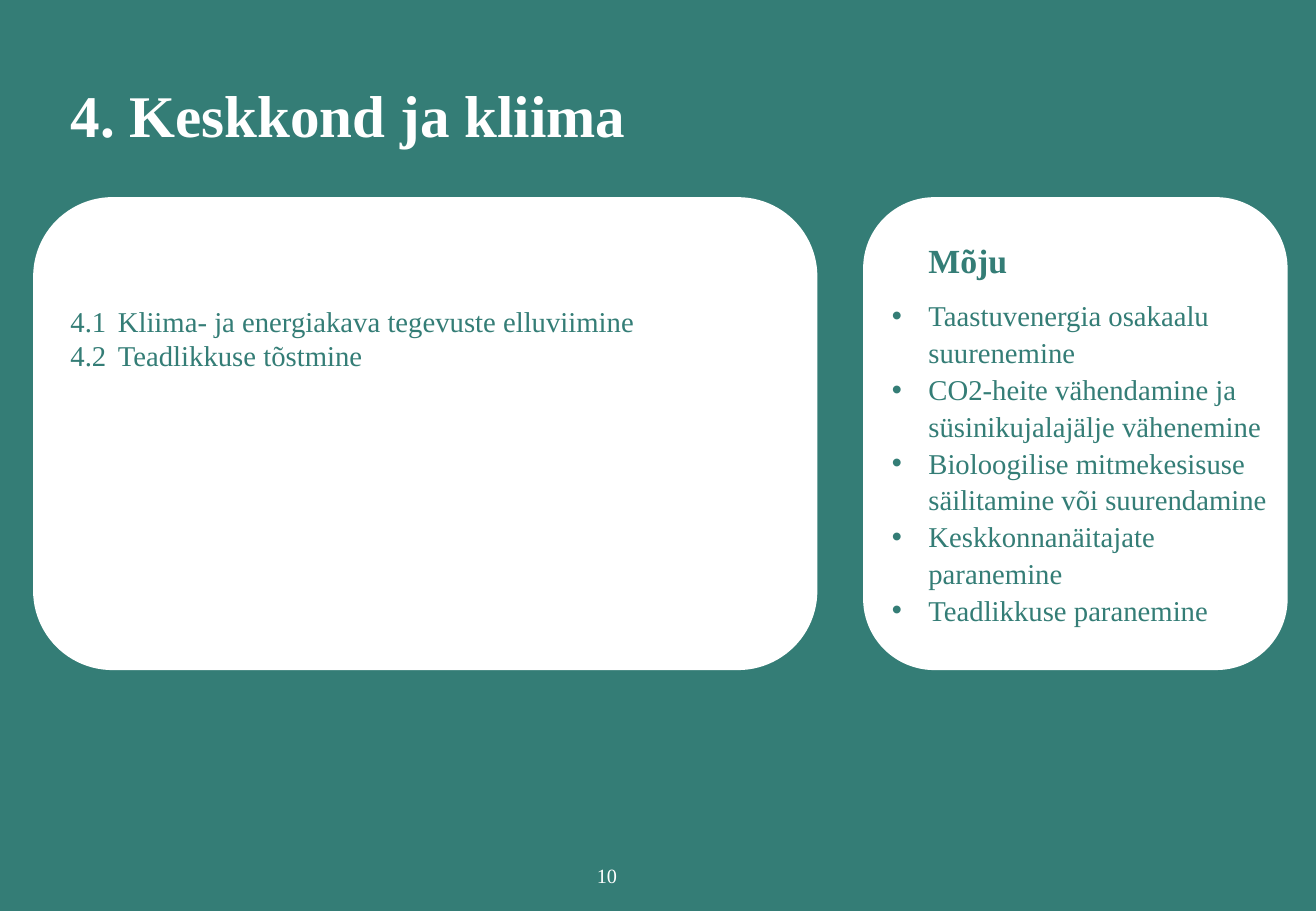
from lxml import etree
from pptx import Presentation
from pptx.dml.color import RGBColor
from pptx.enum.shapes import MSO_SHAPE as Shape
from pptx.enum.text import MSO_ANCHOR as Anchor, PP_ALIGN as Align
from pptx.oxml.ns import qn
from pptx.util import Inches, Pt

COLORS = {"teal": "347D76", "white": "FFFFFF"}
FONT = "Times New Roman"
INSET = 0.05
TEXT_INDENT = 0.39
BULLET_HANG = 0.3

ACTIVITIES = [
    ("4.1", "Kliima- ja energiakava tegevuste elluviimine"),
    ("4.2", "Teadlikkuse tõstmine"),
]
IMPACTS = [
    "Taastuvenergia osakaalu suurenemine",
    "CO2-heite vähendamine ja süsinikujalajälje vähenemine",
    "Bioloogilise mitmekesisuse säilitamine või suurendamine",
    "Keskkonnanäitajate paranemine",
    "Teadlikkuse paranemine",
]


def color(name):
    return RGBColor.from_string(COLORS[name])


def add_text_frame(slide, left, top, width, height, wrap=True):
    frame = slide.shapes.add_textbox(
        Inches(left), Inches(top), Inches(width), Inches(height)).text_frame
    frame.word_wrap = wrap
    frame.vertical_anchor = Anchor.MIDDLE
    frame.margin_left = frame.margin_right = Inches(INSET)
    frame.margin_top = frame.margin_bottom = Inches(INSET)
    return frame


def add_paragraph(frame, text, size, ink, bold=False, align=Align.LEFT):
    """Fill the empty first paragraph, or append a new one."""
    first = frame.paragraphs[0]
    paragraph = frame.add_paragraph() if first.runs else first
    paragraph.alignment = align
    run = paragraph.add_run()
    run.text = text
    run.font.name = FONT
    run.font.size = Pt(size)
    run.font.bold = bold
    run.font.color.rgb = color(ink)
    return paragraph


def set_indent(paragraph, margin, hang=0):
    properties = paragraph._p.get_or_add_pPr()
    properties.set("marL", str(Inches(margin)))
    properties.set("indent", str(Inches(-hang)))
    return properties


def add_bullet(paragraph):
    properties = set_indent(paragraph, TEXT_INDENT, BULLET_HANG)
    etree.SubElement(properties, qn("a:buFont")).set("typeface", "Arial")
    etree.SubElement(properties, qn("a:buChar")).set("char", "•")


def add_card(slide, left, top, width, height):
    card = slide.shapes.add_shape(
        Shape.ROUNDED_RECTANGLE,
        Inches(left), Inches(top), Inches(width), Inches(height))
    card.shadow.inherit = False
    card.fill.solid()
    card.fill.fore_color.rgb = color("white")
    card.line.color.rgb = color("white")
    card.line.width = Pt(1)


def add_activities(slide, left, top, width, height):
    add_card(slide, left, top, width, height)
    frame = add_text_frame(slide, left + 0.25, top + 0.87, width - 0.07, 0.57)
    for number, activity in ACTIVITIES:
        paragraph = add_paragraph(
            frame, f"{number}\t{activity}", 17, "teal", align=Align.JUSTIFY)
        set_indent(paragraph, TEXT_INDENT, TEXT_INDENT)


def add_impacts(slide, left, top, width, height):
    add_card(slide, left, top, width, height)
    frame = add_text_frame(slide, left + 0.09, top + 0.41, width - 0.17, 3.06)
    heading = add_paragraph(frame, "Mõju", 20, "teal", bold=True)
    heading.space_after = Pt(9)
    set_indent(heading, TEXT_INDENT)
    for impact in IMPACTS:
        paragraph = add_paragraph(frame, impact, 17, "teal")
        paragraph.line_spacing = 1.07
        add_bullet(paragraph)


def add_title(slide, left, top, width, height):
    frame = add_text_frame(slide, left, top, width, height)
    add_paragraph(frame, "4. Keskkond ja kliima", 35, "white", bold=True)


def add_page_number(slide, left, top, width, height):
    frame = add_text_frame(slide, left, top, width, height, wrap=False)
    add_paragraph(frame, "10", 12, "white", align=Align.CENTER)


def main():
    deck = Presentation()
    deck.slide_width, deck.slide_height = Inches(10.83), Inches(7.5)
    slide = deck.slides.add_slide(deck.slide_layouts[6])
    slide.background.fill.solid()
    slide.background.fill.fore_color.rgb = color("teal")

    card_top, card_height = 1.63, 3.88
    add_activities(slide, 0.28, card_top, 6.44, card_height)
    add_impacts(slide, 7.11, card_top, 3.48, card_height)
    add_title(slide, 0.53, 0.64, 9.78, 0.6)
    add_page_number(slide, 4.86, 7.06, 0.27, 0.3)
    deck.save("out.pptx")


if __name__ == "__main__":
    main()
